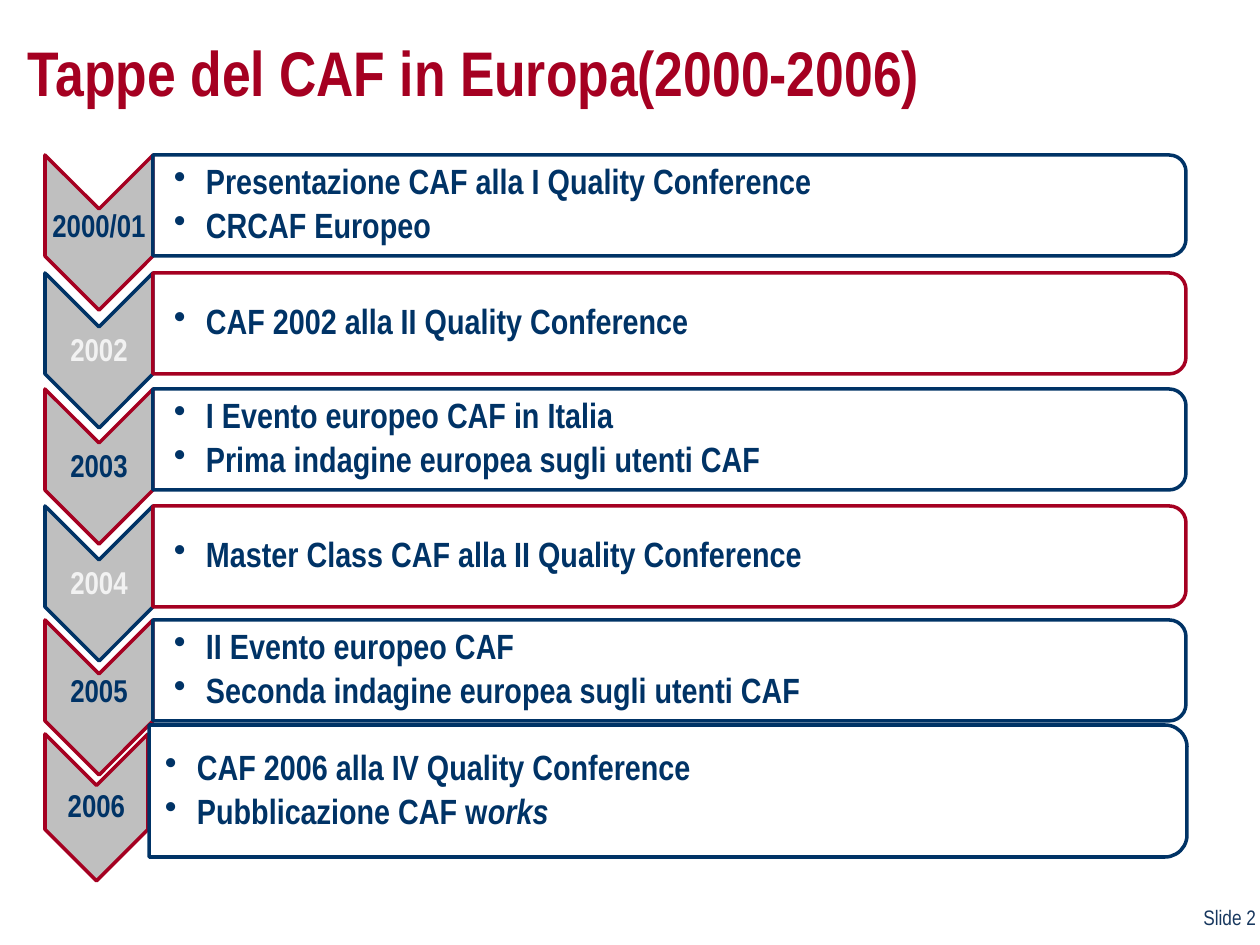
from pptx import Presentation, util as u
from pptx.dml.color import RGBColor
from pptx.enum import shapes, text
from pptx.oxml.ns import qn
from lxml import etree

PX = 914400 // 126
COLORS = {"red": "A50021", "navy": "003366", "light": "F2F2F2",
          "grey": "BFBFBF", "footer": "17375E"}
FONT = "Arial Narrow"

# Content: year, year colour, chevron line, box line, milestones (lists of runs: text, italic)
TITLE = "Tappe del CAF in Europa(2000-2006)"
FOOTER = "Slide 2"
STAGES = [
    ("2000/01", "navy", "red", "navy", [[("Presentazione CAF alla I Quality Conference", False)],
                                        [("CRCAF Europeo", False)]]),
    ("2002", "light", "navy", "red", [[("CAF 2002 alla II Quality Conference", False)]]),
    ("2003", "navy", "red", "navy", [[("I Evento europeo CAF in Italia", False)],
                                     [("Prima indagine europea sugli utenti CAF", False)]]),
    ("2004", "light", "navy", "red", [[("Master Class CAF alla II Quality Conference", False)]]),
    ("2005", "navy", "red", "navy", [[("II Evento europeo CAF", False)],
                                     [("Seconda indagine europea sugli utenti CAF", False)]]),
    ("2006", "navy", "red", "navy", [[("Pubblicazione CAF w", False), ("orks", True)]]),
]
STAGES[-1][4].insert(0, [("CAF 2006 alla IV Quality Conference", False)])

# Layout in px: chevron and box as left, top, width, height; year centre; text inset
ROW_TOPS = [155, 273, 389, 506, 620]
YEAR_DROPS = [72, 78, 78, 78, 72]
ROWS = [((45, top, 108, 155), (153, top, 1033, 101), top + drop, 21)
        for top, drop in zip(ROW_TOPS, YEAR_DROPS)]
ROWS.append(((45, 734, 103, 147), (149, 725, 1038, 132), 807, 16))
YEAR_HEIGHT = 46
BULLET_INDENT = 32


def emu(*lengths):
    return [length * PX for length in lengths]


def rgb(name):
    return RGBColor.from_string(COLORS[name])


def apply(target, values):
    for name, value in values.items():
        setattr(target, name, value)


def add_run(paragraph, words, size, color, bold=True, italic=False):
    run = paragraph.add_run()
    run.text = words
    apply(run.font, {"name": FONT, "size": u.Pt(size), "bold": bold, "italic": italic})
    run.font.color.rgb = rgb(color)


def format_frame(frame, left=0, right=0):
    apply(frame, {"word_wrap": True, "vertical_anchor": text.MSO_ANCHOR.MIDDLE,
                  "margin_left": left * PX, "margin_right": right * PX,
                  "margin_top": 0, "margin_bottom": 0})


def add_text(area, left=0, right=0):
    frame = slide.shapes.add_textbox(*emu(*area)).text_frame
    format_frame(frame, left, right)
    return frame


def add_turned(kind, area, line, fill=None):
    """Place a shape turned by 90 degrees so that it covers the area."""
    left, top, width, height = area
    shape = slide.shapes.add_shape(kind, left * PX + (width - height) * PX // 2,
                                   top * PX + (height - width) * PX // 2,
                                   *emu(height, width))
    shape.rotation = 90
    shape.shadow.inherit = False
    shape.line.color.rgb = rgb(line)
    shape.line.width = u.Pt(2)
    if fill:
        shape.fill.solid()
        shape.fill.fore_color.rgb = rgb(fill)
    else:
        shape.fill.background()


def add_bullet(paragraph):
    props = paragraph._p.get_or_add_pPr()
    props.set("marL", str(BULLET_INDENT * PX))
    props.set("indent", str(-BULLET_INDENT * PX))
    etree.SubElement(props, qn("a:buChar")).set("char", "•")


prs = Presentation()
prs.slide_width, prs.slide_height = emu(1260, 945)
slide = prs.slides.add_slide(prs.slide_layouts[5])

# Title
title = slide.shapes.title
apply(title, dict(zip(("left", "top", "width", "height"), emu(15, 37, 1130, 69))))
format_frame(title.text_frame, 13, 13)
heading = title.text_frame.paragraphs[0]
heading.alignment = text.PP_ALIGN.LEFT
add_run(heading, TITLE, 36, "red")

# Slide number
number = add_text((1007, 886, 262, 63), 13, 13).paragraphs[0]
number.alignment = text.PP_ALIGN.RIGHT
add_run(number, FOOTER, 12, "footer", bold=False)

# Stages: chevron with year, then box with milestones
for (year, year_color, chevron_line, box_line, milestones), row in zip(STAGES, ROWS):
    chevron, box, year_middle, inset = row
    add_turned(shapes.MSO_SHAPE.CHEVRON, chevron, chevron_line, "grey")
    label = add_text((chevron[0], year_middle - YEAR_HEIGHT // 2,
                      chevron[2], YEAR_HEIGHT)).paragraphs[0]
    apply(label, {"alignment": text.PP_ALIGN.CENTER, "line_spacing": 0.9})
    add_run(label, year, 18, year_color)

    add_turned(shapes.MSO_SHAPE.ROUND_2_SAME_RECTANGLE, box, box_line)
    frame = add_text(box, inset)
    for index, runs in enumerate(milestones):
        paragraph = frame.add_paragraph() if index else frame.paragraphs[0]
        apply(paragraph, {"line_spacing": 0.9, "space_after": u.Pt(3.5)})
        add_bullet(paragraph)
        for words, italic in runs:
            add_run(paragraph, words, 20, "navy", italic=italic)

prs.save("out.pptx")
